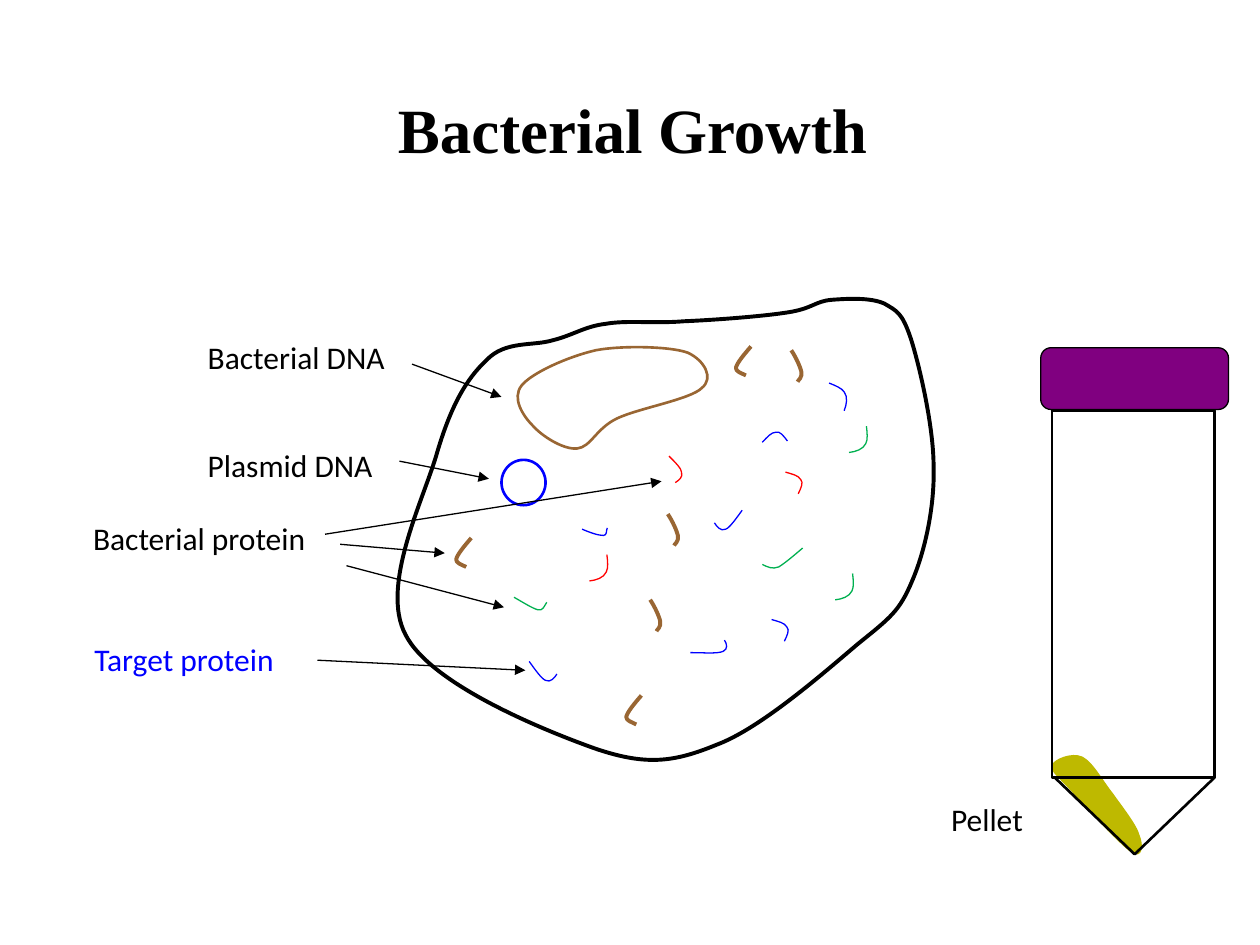
from dataclasses import dataclass

from lxml import etree
from pptx import Presentation
from pptx.dml.color import RGBColor
from pptx.enum.shapes import MSO_CONNECTOR, MSO_SHAPE
from pptx.enum.text import MSO_AUTO_SIZE
from pptx.oxml.ns import qn
from pptx.util import Cm, Pt

STRAIGHT = MSO_CONNECTOR.STRAIGHT
RECTANGLE = MSO_SHAPE.RECTANGLE
ROUNDED = MSO_SHAPE.ROUNDED_RECTANGLE
TRIANGLE = MSO_SHAPE.ISOSCELES_TRIANGLE
OVAL = MSO_SHAPE.OVAL
FIT_SHAPE = MSO_AUTO_SIZE.SHAPE_TO_FIT_TEXT

BLACK, BLUE, RED, GREEN = "000000", "0000FF", "FF0000", "00B050"
BROWN, PURPLE, OLIVE = "996633", "800080", "BEB900"
UNIT = 2.54  # centimetres per layout unit

Points = list[tuple[float, float]]


@dataclass
class Label:
    text: str
    left: float
    top: float
    width: float
    height: float = 0.4
    color: str = BLACK
    size: float = 18
    font: str = "Calibri"
    bold: bool = False


@dataclass
class Protein:
    outline: Points
    color: str
    left: float
    top: float
    rotation: float = 0
    weight: float = 0.75


def length(units: float) -> Cm:
    return Cm(units * UNIT)


def rgb(color: str) -> RGBColor:
    return RGBColor.from_string(color)


def paint(shape, line: str, weight: float, fill: str | None = None) -> None:
    shape.shadow.inherit = False
    shape.line.color.rgb = rgb(line)
    shape.line.width = Pt(weight)
    if fill:
        shape.fill.solid()
        shape.fill.fore_color.rgb = rgb(fill)
    else:
        shape.fill.background()


def add_curve(shapes, points: Points, line: str, weight: float,
              fill: str | None = None, closed: bool = False):
    """Draw a start point followed by triples of Bézier points."""
    start, *rest = [(length(x), length(y)) for x, y in points]
    builder = shapes.build_freeform(*start)
    builder.add_line_segments(rest, close=closed)
    curve = builder.convert_to_shape()
    segments = list(curve._element.iter(qn("a:lnTo")))
    for i in range(0, len(segments), 3):
        bezier = etree.Element(qn("a:cubicBezTo"))
        segments[i].addprevious(bezier)
        for segment in segments[i:i + 3]:
            bezier.append(segment[0])
            segment.getparent().remove(segment)
    paint(curve, line, weight, fill)
    return curve


def add_protein(shapes, protein: Protein) -> None:
    points = [(protein.left + x, protein.top + y) for x, y in protein.outline]
    curve = add_curve(shapes, points, protein.color, protein.weight)
    curve.rotation = protein.rotation


def add_preset(shapes, kind, box: tuple, line: str, weight: float,
               fill: str | None = None):
    shape = shapes.add_shape(kind, *map(length, box))
    paint(shape, line, weight, fill)
    return shape


def add_label(shapes, label: Label) -> None:
    box = (label.left, label.top, label.width, label.height)
    frame = shapes.add_textbox(*map(length, box)).text_frame
    frame.word_wrap = False
    frame.auto_size = FIT_SHAPE
    run = frame.paragraphs[0].add_run()
    run.text = label.text
    formats = {"name": label.font, "size": Pt(label.size), "bold": label.bold}
    for attribute, value in formats.items():
        setattr(run.font, attribute, value)
    run.font.color.rgb = rgb(label.color)


def add_arrow(shapes, ends: tuple) -> None:
    arrow = shapes.add_connector(STRAIGHT, *map(length, ends))
    arrow.line.color.rgb = rgb(BLACK)
    arrow.line.width = Pt(0.75)
    etree.SubElement(arrow.line._get_or_add_ln(), qn("a:tailEnd"), type="triangle")
    etree.SubElement(arrow._element.spPr, qn("a:effectLst"))


PELLET = [(8.35, 6.08), (8.36, 6.03), (8.51, 5.97), (8.59, 6.01), (8.67, 6.05),
          (8.75, 6.2), (8.83, 6.3), (8.9, 6.4), (9.02, 6.55), (9.04, 6.63),
          (9.07, 6.7), (9.07, 6.82), (8.98, 6.76), (8.89, 6.7), (8.61, 6.39),
          (8.51, 6.28), (8.42, 6.18), (8.34, 6.12), (8.35, 6.08)]
CELL = [(4.39, 2.7), (4.55, 2.66), (4.64, 2.59), (4.81, 2.57), (4.98, 2.54),
        (5.19, 2.57), (5.43, 2.55), (5.67, 2.54), (6.06, 2.51), (6.25, 2.48),
        (6.45, 2.45), (6.47, 2.39), (6.6, 2.38), (6.73, 2.37), (6.91, 2.36),
        (7.02, 2.41), (7.12, 2.47), (7.16, 2.48), (7.23, 2.69), (7.3, 2.91),
        (7.41, 3.39), (7.41, 3.7), (7.42, 4.02), (7.34, 4.38), (7.24, 4.61),
        (7.14, 4.85), (7.07, 4.9), (6.81, 5.11), (6.55, 5.33), (6.04, 5.78),
        (5.69, 5.91), (5.35, 6.05), (5.13, 6.08), (4.72, 5.94), (4.3, 5.79),
        (3.42, 5.43), (3.22, 5.04), (3.01, 4.65), (3.37, 3.95), (3.47, 3.59),
        (3.58, 3.22), (3.7, 3.01), (3.86, 2.86), (4.01, 2.7), (4.23, 2.75),
        (4.39, 2.7)]
CHROMOSOME = [(4.73, 2.78), (4.51, 2.83), (4.22, 2.96), (4.14, 3.06), (4.06, 3.16),
              (4.15, 3.3), (4.23, 3.38), (4.3, 3.46), (4.47, 3.57), (4.58, 3.56),
              (4.69, 3.55), (4.73, 3.4), (4.9, 3.32), (5.07, 3.24), (5.48, 3.17),
              (5.57, 3.08), (5.67, 3), (5.59, 2.86), (5.46, 2.8), (5.33, 2.75),
              (4.94, 2.74), (4.73, 2.78)]

# Protein outlines, measured from their own top left corner
ARCH = [(0.2, 0.08), (0.17, 0.04), (0.14, 0), (0.11, 0.01), (0.07, 0.01), (0.04, 0.05), (0, 0.09)]
HOOK = [(0, 0), (0.05, 0.02), (0.1, 0.04), (0.12, 0.07), (0.15, 0.11), (0.14, 0.17), (0.12, 0.22)]
DIP = [(0, 0), (0.05, 0.07), (0.1, 0.14), (0.13, 0.15), (0.17, 0.17), (0.2, 0.13), (0.22, 0.1)]
DIP_MIRRORED = [(0.22 - x, y) for x, y in DIP]
SHALLOW = [(0, 0.01), (0.07, 0.04), (0.13, 0.06), (0.17, 0.06), (0.2, 0.06), (0.19, 0.02), (0.2, 0)]
SWEEP = [(0.32, 0), (0.25, 0.06), (0.18, 0.12), (0.13, 0.15), (0.08, 0.17), (0.04, 0.15), (0, 0.13)]
LADLE = [(0, 0), (0.07, 0.04), (0.15, 0.09), (0.19, 0.1), (0.23, 0.11), (0.24, 0.07), (0.26, 0.04)]
FLAT = [(0, 0.1), (0.11, 0.1), (0.21, 0.11), (0.26, 0.09), (0.3, 0.07), (0.29, 0.03), (0.27, 0)]
FOOT = [(0.12, 0), (0.06, 0.07), (0.01, 0.13), (0, 0.17), (0, 0.2), (0.04, 0.21), (0.08, 0.23)]
BEND = [(0, 0), (0.04, 0.06), (0.07, 0.13), (0.08, 0.17), (0.09, 0.22), (0.05, 0.24), (0.05, 0.25)]

PROTEINS = [
    Protein(SHALLOW, BLUE, 4.62, 4.19), Protein(SWEEP, GREEN, 6.05, 4.35),
    Protein(LADLE, GREEN, 4.08, 4.74), Protein(DIP_MIRRORED, BLUE, 5.67, 4.05),
    Protein(FLAT, BLUE, 5.48, 5.08), Protein(ARCH, BLUE, 6.05, 3.42),
    Protein([(0, 0), (0.05, 0.05), (0.1, 0.1), (0.1, 0.13), (0.11, 0.17),
             (0.08, 0.19), (0.05, 0.21)], RED, 5.31, 3.62),
    Protein(DIP, BLUE, 4.2, 5.25), Protein(HOOK, BLUE, 6.58, 3.04),
    Protein(ARCH, RED, 6.22, 3.77, 62.5), Protein(HOOK, GREEN, 6.74, 3.39, 62),
    Protein(HOOK, RED, 4.68, 4.41, 62), Protein(ARCH, BLUE, 6.11, 4.94, 62.5),
    Protein(HOOK, GREEN, 6.63, 4.56, 62),
] + [Protein(outline, BROWN, left, top, weight=2.25) for outline, left, top in [
    (FOOT, 3.62, 4.27), (BEND, 5.3, 4.08), (FOOT, 4.97, 5.52),
    (BEND, 5.16, 4.76), (FOOT, 5.84, 2.75), (BEND, 6.28, 2.78)]]

LABELS = [
    Label("Pellet", 7.45, 6.3, 0.8),
    Label("Bacterial Growth", 3.06, 0.67, 3.94, 0.7, size=36,
          font="Times New Roman", bold=True),
    Label("Plasmid DNA", 1.55, 3.49, 1.61),
    Label("Bacterial DNA", 1.55, 2.63, 1.71),
    Label("Bacterial protein", 0.64, 4.07, 1.9),
    Label("Target protein", 0.65, 5.03, 1.64, color=BLUE),
]
ARROWS = [(3.17, 3.66, 3.88, 3.8), (3.27, 2.89, 3.98, 3.15), (2.7, 4.32, 3.53, 4.39),
          (2.52, 5.24, 4.17, 5.32), (2.58, 4.24, 5.25, 3.82), (2.75, 4.49, 4, 4.82)]


def main() -> None:
    deck = Presentation()
    deck.slide_width, deck.slide_height = length(10), length(7.5)
    shapes = deck.slides.add_slide(deck.slide_layouts[6]).shapes

    # Centrifuge tube with its pellet
    add_curve(shapes, PELLET, OLIVE, 0.75, OLIVE, closed=True)
    add_preset(shapes, RECTANGLE, (8.35, 3.26, 1.29, 2.91), BLACK, 1.5)
    tip = add_preset(shapes, TRIANGLE, (8.37, 6.17, 1.27, 0.61), BLACK, 1.5)
    tip.rotation = 180
    add_preset(shapes, ROUNDED, (8.26, 2.76, 1.49, 0.49), BLACK, 0.75, PURPLE)

    # Bacterial cell and its contents
    add_curve(shapes, CELL, BLACK, 2.25, closed=True)
    add_curve(shapes, CHROMOSOME, BROWN, 1.5, closed=True)
    add_preset(shapes, OVAL, (3.98, 3.65, 0.35, 0.36), BLUE, 1.5)
    for protein in PROTEINS:
        add_protein(shapes, protein)

    # Title, labels and pointers
    for label in LABELS:
        add_label(shapes, label)
    for ends in ARROWS:
        add_arrow(shapes, ends)

    deck.save("out.pptx")


if __name__ == "__main__":
    main()
